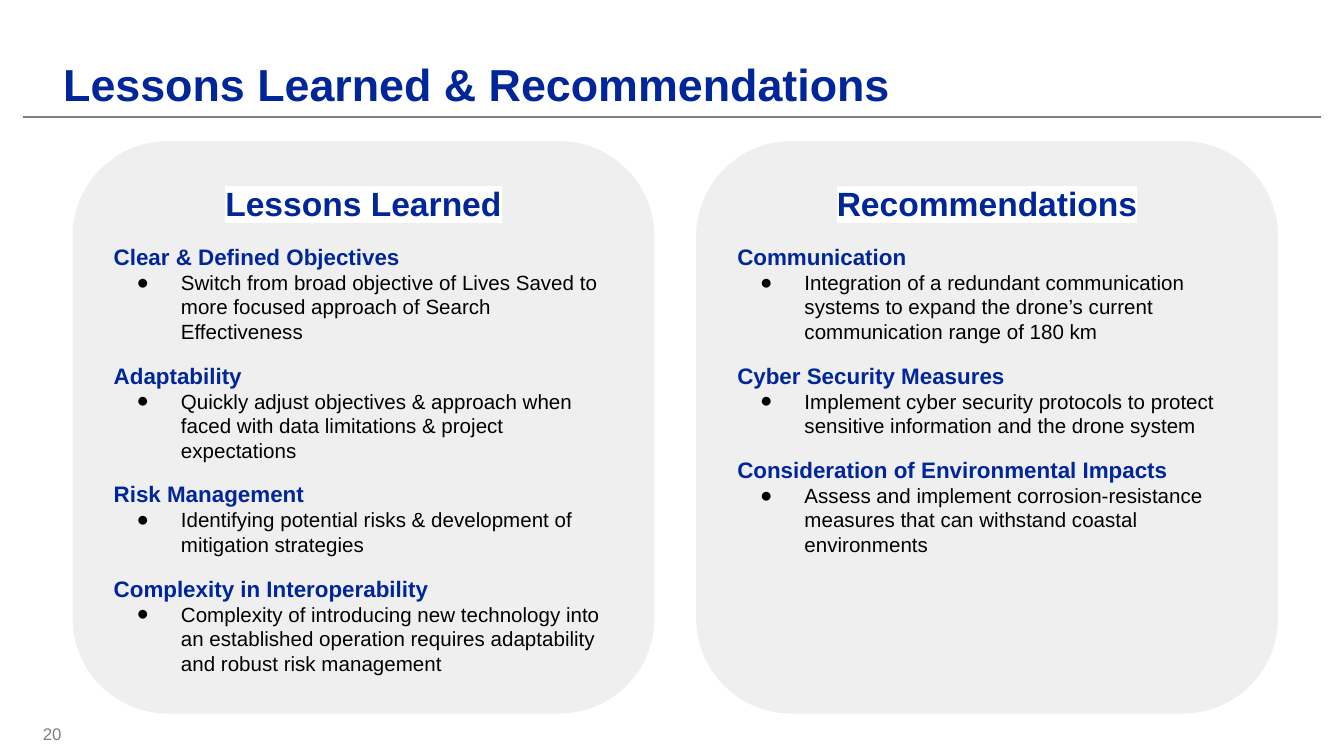
"""Build the lessons learned and recommendations slide."""
from dataclasses import dataclass

from lxml.etree import SubElement
from pptx import Presentation
from pptx.dml.color import RGBColor
from pptx.enum.shapes import MSO_CONNECTOR as Connector, MSO_SHAPE as Shape
from pptx.enum.text import MSO_ANCHOR as Anchor, MSO_AUTO_SIZE as AutoSize, PP_ALIGN as Align
from pptx.oxml.ns import qn
from pptx.slide import Slide
from pptx.text.text import TextFrame, _Paragraph as Paragraph
from pptx.util import Inches, Pt

NAVY = RGBColor(0x00, 0x26, 0x9A)
GRAY = RGBColor(0x7F, 0x7F, 0x7F)
PALE = RGBColor(0xEF, 0xEF, 0xEF)
BLACK = RGBColor(0x00, 0x00, 0x00)
WHITE = RGBColor(0xFF, 0xFF, 0xFF)

SLIDE_WIDTH = 10
SLIDE_HEIGHT = SLIDE_WIDTH * 9 / 16
PANEL_LEFT, PANEL_TOP = 0.54, 1.05
PANEL_WIDTH, PANEL_HEIGHT = 4.33, 4.26
PANEL_STEP = 4.64


@dataclass
class Topic:
    name: str
    detail: str


@dataclass
class Panel:
    heading: str
    topics: list[Topic]


PANELS = [
    Panel("Lessons Learned", [
        Topic("Clear & Defined Objectives",
              "Switch from broad objective of Lives Saved to more focused approach of "
              "Search Effectiveness"),
        Topic("Adaptability",
              "Quickly adjust objectives & approach when faced with data limitations & "
              "project expectations"),
        Topic("Risk Management",
              "Identifying potential risks & development of mitigation strategies"),
        Topic("Complexity in Interoperability",
              "Complexity of introducing new technology into an established operation "
              "requires adaptability and robust risk management"),
    ]),
    Panel("Recommendations", [
        Topic("Communication",
              "Integration of a redundant communication systems to expand the drone’s "
              "current communication range of 180 km"),
        Topic("Cyber Security Measures",
              "Implement cyber security protocols to protect sensitive information and "
              "the drone system"),
        Topic("Consideration of Environmental Impacts",
              "Assess and implement corrosion-resistance measures that can withstand "
              "coastal environments"),
    ]),
]


def style(para: Paragraph, size: float, color: RGBColor, bold: bool = False,
          align: Align = Align.LEFT, before: float = 0) -> None:
    para.alignment = align
    para.space_before = Pt(before)
    para.font.name = "Arial"
    para.font.size = Pt(size)
    para.font.bold = bold
    para.font.color.rgb = color


def add_color(parent, tag: str, color: RGBColor) -> None:
    SubElement(SubElement(parent, qn(tag)), qn("a:srgbClr")).set("val", str(color))


def add_bullet(para: Paragraph) -> None:
    properties = para._p.get_or_add_pPr()
    properties.set("marL", str(Inches(0.5)))
    properties.set("indent", str(Inches(-0.33)))
    add_color(properties, "a:buClr", BLACK)
    SubElement(properties, qn("a:buSzPts")).set("val", "1100")
    SubElement(properties, qn("a:buFont")).set("typeface", "Arial")
    SubElement(properties, qn("a:buChar")).set("char", "●")


def add_topic(frame: TextFrame, topic: Topic, before: float) -> None:
    name = frame.add_paragraph()
    name.text = topic.name
    style(name, 12, NAVY, bold=True, before=before)
    detail = frame.add_paragraph()
    detail.text = topic.detail
    add_bullet(detail)
    style(detail, 11, BLACK)


def add_panel(page: Slide, panel: Panel, left: float) -> None:
    box = page.shapes.add_shape(Shape.ROUNDED_RECTANGLE, Inches(left), Inches(PANEL_TOP),
                                Inches(PANEL_WIDTH), Inches(PANEL_HEIGHT))
    box.shadow.inherit = False
    box.fill.solid()
    box.fill.fore_color.rgb = PALE
    box.line.fill.background()
    frame = box.text_frame
    frame.word_wrap = True
    frame.vertical_anchor = Anchor.TOP
    frame.margin_left = frame.margin_right = Inches(0.1)
    frame.margin_top = frame.margin_bottom = Inches(0.1)
    heading = frame.paragraphs[0]
    span = heading.add_run()
    span.text = panel.heading
    add_color(span._r.get_or_add_rPr(), "a:highlight", WHITE)
    style(heading, 18, NAVY, bold=True, align=Align.CENTER)
    for index, topic in enumerate(panel.topics):
        add_topic(frame, topic, before=9.6 if index else 10.8)


def add_title(page: Slide, text: str) -> None:
    title = page.shapes.title
    title.left, title.top = Inches(0.37), Inches(0.12)
    title.width, title.height = Inches(7.96), Inches(0.76)
    frame = title.text_frame
    frame.text = text
    frame.auto_size = AutoSize.NONE
    frame.vertical_anchor = Anchor.BOTTOM
    para = frame.paragraphs[0]
    para.line_spacing = 0.9
    style(para, 24, NAVY, bold=True)


def add_rule(page: Slide) -> None:
    rule = page.shapes.add_connector(Connector.STRAIGHT, Inches(0.17), Inches(0.87),
                                     Inches(9.83), Inches(0.87))
    rule.line.color.rgb = GRAY
    rule.line.width = Pt(0.75)
    SubElement(rule._element.spPr, qn("a:effectLst"))


def add_page_number(page: Slide, number: int) -> None:
    box = page.shapes.add_textbox(Inches(0.22), Inches(5.31), Inches(0.44), Inches(0.3))
    frame = box.text_frame
    frame.word_wrap = True
    frame.vertical_anchor = Anchor.MIDDLE
    frame.text = str(number)
    style(frame.paragraphs[0], 9, GRAY)


def main() -> None:
    deck = Presentation()
    deck.slide_width, deck.slide_height = Inches(SLIDE_WIDTH), Inches(SLIDE_HEIGHT)
    page = deck.slides.add_slide(deck.slide_layouts[5])
    add_rule(page)
    add_title(page, "Lessons Learned & Recommendations")
    add_page_number(page, 20)
    for index, panel in enumerate(PANELS):
        add_panel(page, panel, PANEL_LEFT + index * PANEL_STEP)
    deck.save("out.pptx")


if __name__ == "__main__":
    main()
